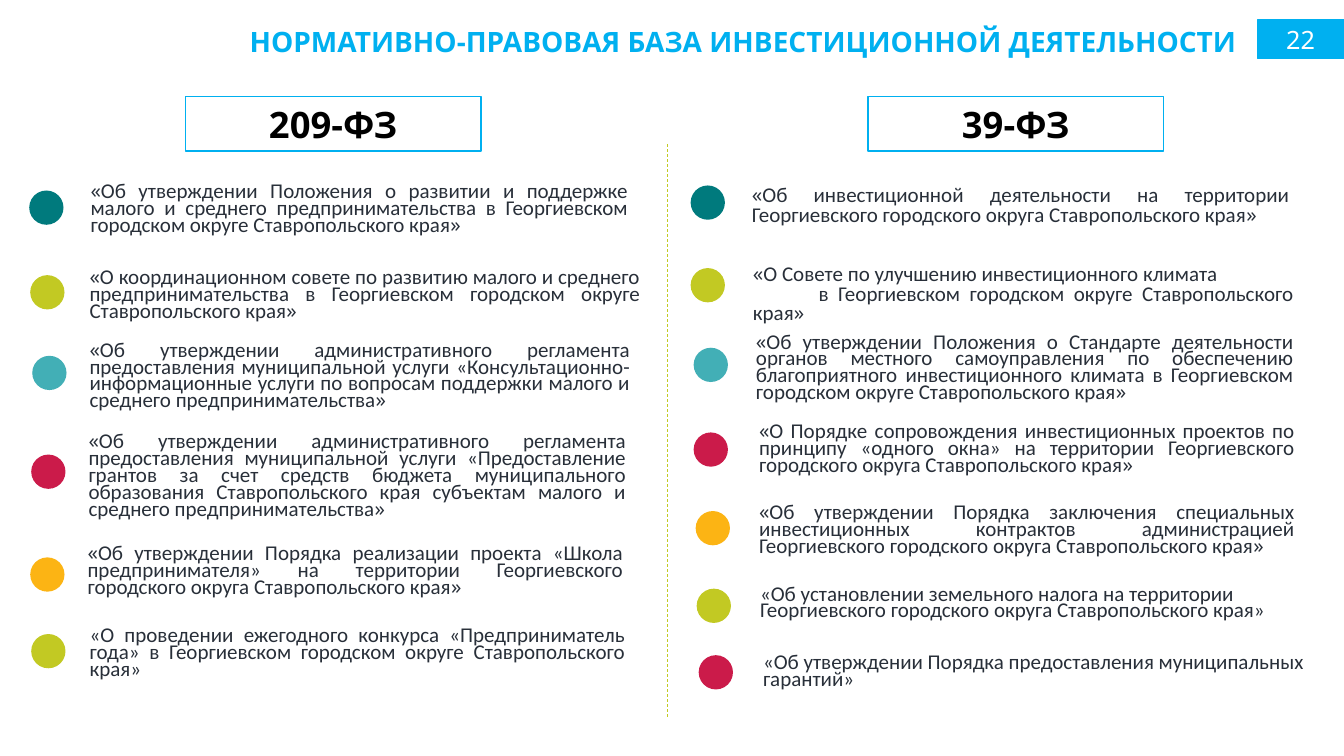
"""Builds a slide listing the legal acts behind investment activity."""
from dataclasses import dataclass

from lxml import etree
from pptx import Presentation
from pptx.dml.color import RGBColor
from pptx.enum.dml import MSO_LINE
from pptx.enum.shapes import MSO_CONNECTOR, MSO_SHAPE
from pptx.enum.text import MSO_ANCHOR, MSO_AUTO_SIZE, PP_ALIGN
from pptx.oxml.ns import qn
from pptx.util import Pt

PX = 9144
DOT = 34
TITLE_ONLY = 5
RECT, OVAL = MSO_SHAPE.RECTANGLE, MSO_SHAPE.OVAL
STRAIGHT, DASH = MSO_CONNECTOR.STRAIGHT, MSO_LINE.DASH
LEFT, CENTER, JUSTIFY = PP_ALIGN.LEFT, PP_ALIGN.CENTER, PP_ALIGN.JUSTIFY
TOP, MIDDLE = MSO_ANCHOR.TOP, MSO_ANCHOR.MIDDLE
FIT = MSO_AUTO_SIZE.SHAPE_TO_FIT_TEXT


@dataclass(frozen=True)
class Theme:
    """Colours, fonts and type sizes of the slide."""
    accent: str = "00B0F0"
    ink: str = "282F39"
    black: str = "000000"
    white: str = "FFFFFF"
    teal: str = "007A7D"
    lime: str = "C2C923"
    aqua: str = "42AFB6"
    red: str = "CB1B4A"
    amber: str = "FCB414"
    head_font: str = "Noto Sans"
    body_font: str = "Calibri"
    quote_font: str = "Open Sans"
    title_size: int = 20
    number_size: int = 18
    label_size: int = 26
    body_size: int = 15


T = Theme()


class Deck:
    """Draws styled elements on the current slide."""

    def __init__(self, theme, width, height):
        self.theme = theme
        self.prs = Presentation()
        self.prs.slide_width, self.prs.slide_height = width * PX, height * PX
        self.slide = self.prs.slides.add_slide(self.prs.slide_layouts[TITLE_ONLY])

    def box(self, *lengths):
        """Turns px lengths into EMU."""
        return [n * PX for n in lengths]

    def run(self, p, text, color, **font):
        """Adds one formatted run."""
        r = p.add_run()
        r.text = text
        for name, value in font.items():
            setattr(r.font, name, value)
        r.font.color.rgb = RGBColor.from_string(color)

    def title(self, place, text):
        """Fills the title placeholder."""
        t, s = self.theme, self.slide.shapes.title
        s.left, s.top, s.width, s.height = self.box(*place)
        tf = s.text_frame
        for name, value in dict(word_wrap=True, auto_size=FIT, vertical_anchor=TOP).items():
            setattr(tf, name, value)
        p = tf.paragraphs[0]
        p.alignment = CENTER
        self.run(p, text, t.accent, name=t.head_font, size=Pt(t.title_size), bold=True)

    def shape(self, kind, place, fill=None, line=None):
        """Adds a flat preset shape."""
        s = self.slide.shapes.add_shape(kind, *self.box(*place))
        s.shadow.inherit = False
        if fill:
            s.fill.solid()
            s.fill.fore_color.rgb = RGBColor.from_string(fill)
        else:
            s.fill.background()
        if line:
            s.line.color.rgb = RGBColor.from_string(line)
            s.line.width = Pt(1)
        else:
            s.line.fill.background()
        return s

    def label(self, place, text, color, size, fill=None, bold=False):
        """Adds a framed rectangle with centred text."""
        t = self.theme
        tf = self.shape(RECT, place, fill, t.accent).text_frame
        tf.vertical_anchor = MIDDLE
        p = tf.paragraphs[0]
        p.alignment = CENTER
        self.run(p, text, color, name=t.head_font, size=Pt(size), bold=bold)

    def divider(self, x, top, bottom):
        """Adds the dashed vertical line."""
        c = self.slide.shapes.add_connector(STRAIGHT, *self.box(x, top, x, bottom))
        c.line.color.rgb = RGBColor.from_string(self.theme.lime)
        c.line.width = Pt(0.5)
        c.line.dash_style = DASH
        etree.SubElement(c.element.spPr, qn("a:effectLst"))

    def act(self, dot, color, place, paragraphs, leading=12, mixed=True):
        """Adds a coloured dot and the name of one act."""
        t = self.theme
        self.shape(OVAL, (*dot, DOT, DOT), color)
        tf = self.slide.shapes.add_textbox(*self.box(*place)).text_frame
        tf.word_wrap, tf.auto_size = True, FIT
        for i, (text, align, indent) in enumerate(paragraphs):
            p = tf.add_paragraph() if i else tf.paragraphs[0]
            p.alignment, p.line_spacing = align, Pt(leading)
            if indent:
                p._p.get_or_add_pPr().set("indent", str(indent * PX))
            start = int(mixed and text.startswith("«"))
            end = len(text) - int(mixed and text.endswith("»"))
            parts = ((text[:start], t.quote_font), (text[start:end], t.body_font),
                     (text[end:], t.quote_font))
            for part, font in parts:
                if part:
                    self.run(p, part, t.ink, name=font, size=Pt(t.body_size))


def justified(text):
    """Makes a single justified paragraph."""
    return [(text, JUSTIFY, 0)]


def flush_left(text):
    """Makes a single left-aligned paragraph."""
    return [(text, LEFT, 0)]


ACTS = [
    ((29, 189), T.teal, (80, 180, 553, 62), justified("«Об утверждении Положения о развитии и поддержке малого и среднего предпринимательства в Георгиевском городском округе Ставропольского края»")),
    ((30, 273), T.lime, (79, 265, 566, 62), justified("«О координационном совете по развитию малого и среднего предпринимательства в Георгиевском городском округе Ставропольского края»")),
    ((32, 353), T.aqua, (79, 337, 556, 79), justified("«Об утверждении административного регламента предоставления муниципальной услуги «Консультационно-информационные услуги по вопросам поддержки малого и среднего предпринимательства»")),
    ((31, 451), T.red, (78, 428, 553, 95), justified("«Об утверждении административного регламента предоставления муниципальной услуги «Предоставление грантов за счет средств бюджета муниципального образования Ставропольского края субъектам малого и среднего предпринимательства»")),
    ((30, 553), T.amber, (77, 539, 551, 62), justified("«Об утверждении Порядка реализации проекта «Школа предпринимателя» на территории Георгиевского городского округа Ставропольского края»")),
    ((31, 629), T.lime, (79, 620, 551, 62), justified("«О проведении ежегодного конкурса «Предприниматель года» в Георгиевском городском округе Ставропольского края»"), 12, False),
    ((685, 184), T.teal, (736, 181, 553, 50), justified("«Об инвестиционной деятельности на территории Георгиевского городского округа Ставропольского края»"), 14),
    ((685, 266), T.lime, (737, 259, 556, 50), [
        ("«О Совете по улучшению инвестиционного климата", LEFT, 0),
        ("в Георгиевском городском округе Ставропольского края»", JUSTIFY, 65)], 14),
    ((688, 345), T.aqua, (740, 329, 553, 79), justified("«Об утверждении Положения о Стандарте деятельности органов местного самоуправления по обеспечению благоприятного инвестиционного климата в Георгиевском городском округе Ставропольского края»")),
    ((688, 429), T.red, (743, 418, 551, 62), justified("«О Порядке сопровождения инвестиционных проектов по принципу «одного окна» на территории Георгиевского городского округа Ставропольского края»")),
    ((690, 507), T.amber, (743, 498, 551, 62), justified("«Об утверждении Порядка заключения специальных инвестиционных контрактов администрацией Георгиевского городского округа Ставропольского края»")),
    ((691, 584), T.lime, (744, 579, 543, 45), flush_left("«Об установлении земельного налога на территории Георгиевского городского округа Ставропольского края»"), 12, False),
    ((693, 650), T.red, (747, 647, 573, 45), flush_left("«Об утверждении Порядка предоставления муниципальных гарантий»"), 12, False),
]


def main():
    """Builds and saves the slide."""
    deck = Deck(T, 1333, 750)
    deck.title((219, 19, 1036, 44), "НОРМАТИВНО-ПРАВОВАЯ БАЗА ИНВЕСТИЦИОННОЙ ДЕЯТЕЛЬНОСТИ")
    deck.label((1247, 20, 86, 38), "22", T.white, T.number_size, fill=T.accent)
    for x, law in ((184, "209-ФЗ"), (861, "39-ФЗ")):
        deck.label((x, 96, 293, 54), law, T.black, T.label_size, bold=True)
    deck.divider(662, 143, 713)
    for act in ACTS:
        deck.act(*act)
    deck.prs.save("out.pptx")


if __name__ == "__main__":
    main()
